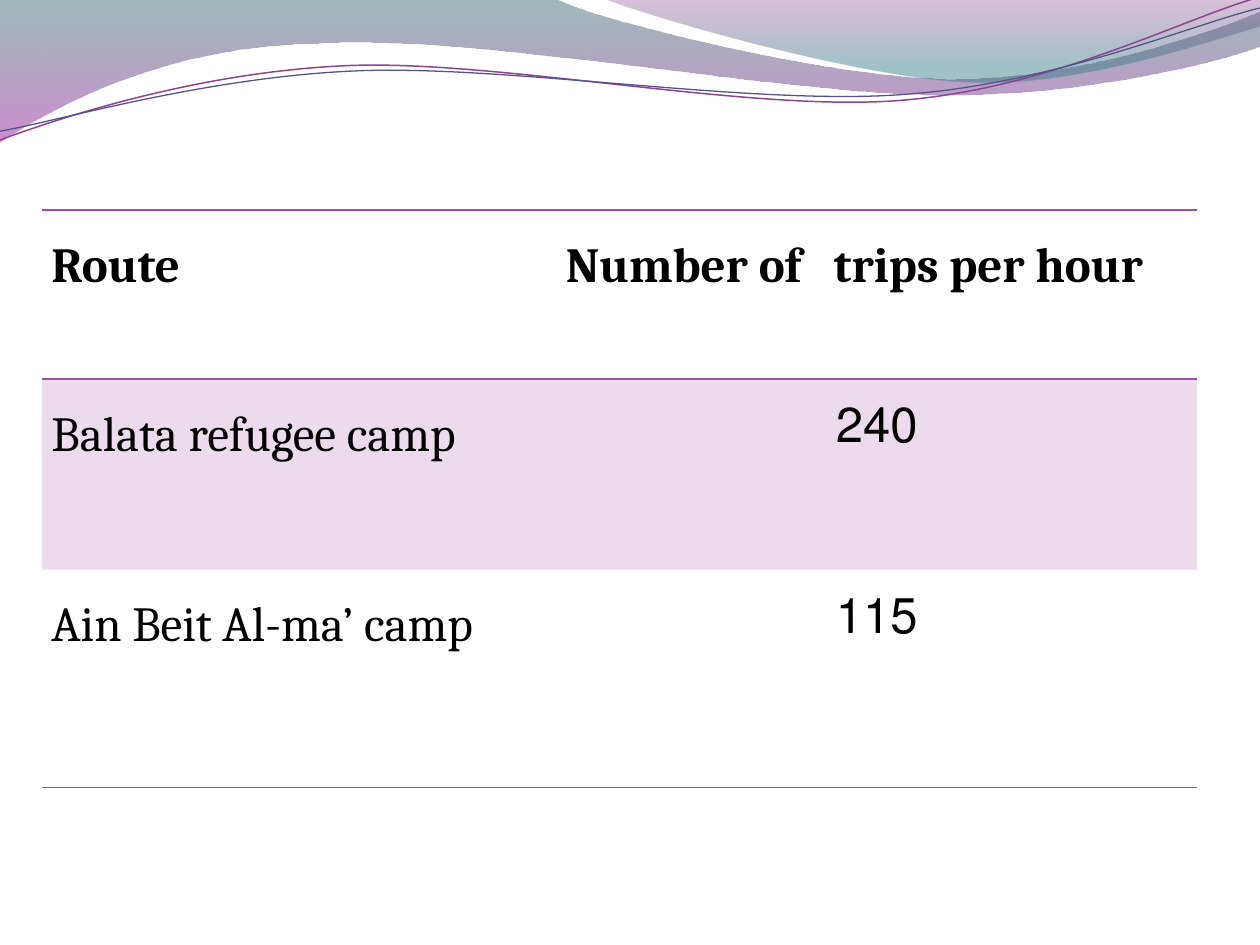
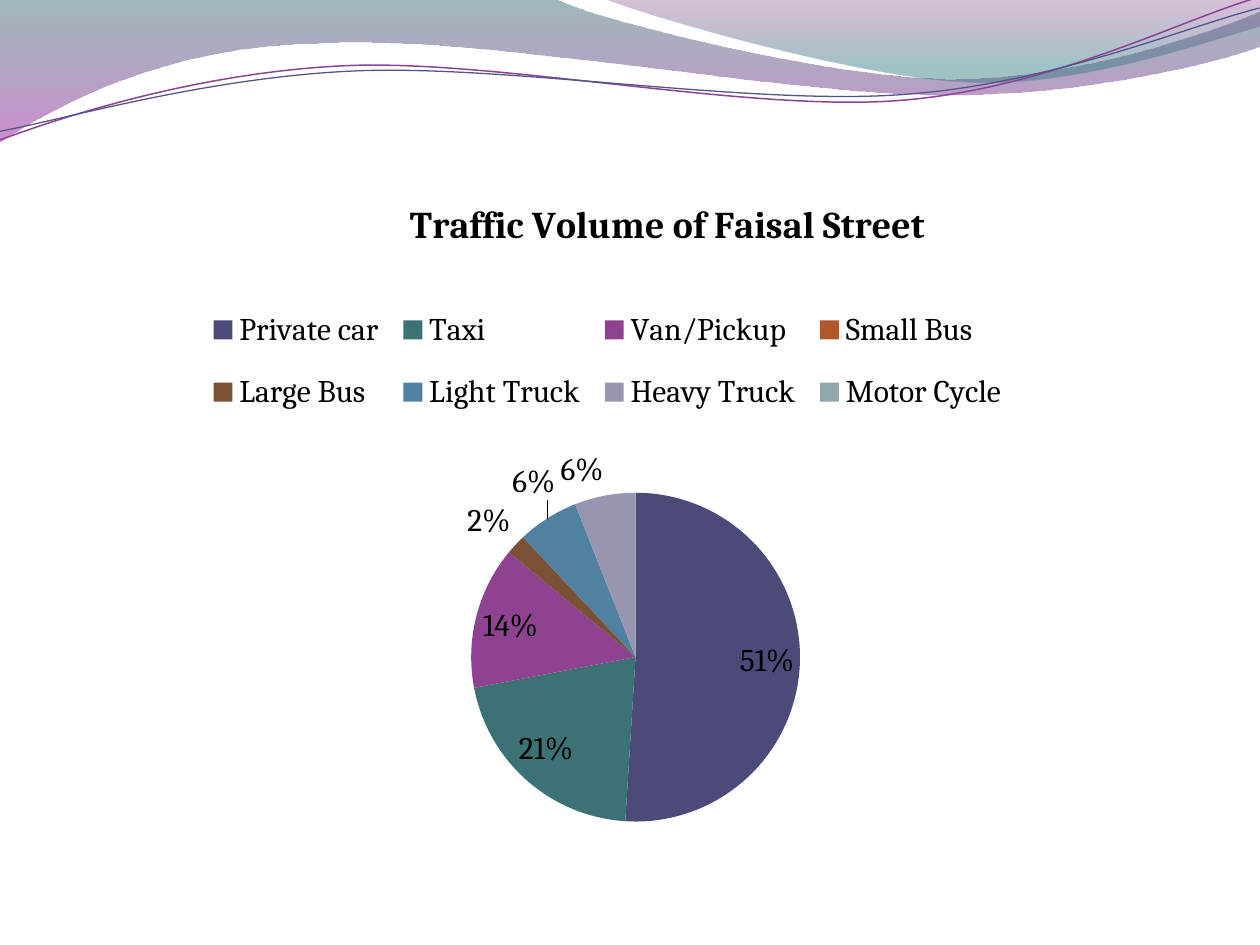
"""Build two traffic survey slides: a table of trips and a pie chart of volume."""
from dataclasses import dataclass

from lxml import etree
from pptx import Presentation
from pptx.chart.data import CategoryChartData
from pptx.dml.color import RGBColor
from pptx.enum.chart import XL_CHART_TYPE, XL_LABEL_POSITION, XL_LEGEND_POSITION
from pptx.enum.text import PP_ALIGN
from pptx.oxml.ns import qn
from pptx.util import Pt

PIE = XL_CHART_TYPE.PIE
BEST_FIT = XL_LABEL_POSITION.BEST_FIT
LEGEND_TOP = XL_LEGEND_POSITION.TOP
LEFT, CENTER = PP_ALIGN.LEFT, PP_ALIGN.CENTER
NO_TABLE_STYLE = "{2D5ABB26-0587-4C30-8999-92F81FD0307C}"


@dataclass(frozen=True)
class Theme:
    """Colours, font and type sizes of the deck."""
    font: str = "Cambria"
    text: str = "000000"
    accent: str = "A04DA3"
    tint: int = 20
    table_size: float = 28
    title_size: float = 21.6
    chart_size: float = 18
    wide_wave: tuple = ((0, "2D6368", 45), (100, "A530A9", 55))
    right_wave: tuple = ((0, "7F2F82", 30), (80, "2F7B82", 45))
    purple_line: str = "8D4490"
    indigo_line: str = "53548A"
    slices: tuple = ("4B4A79", "3B7276", "8E4290", "AF5829",
                     "7B5135", "5081A1", "9796B0", "90A8AC")


WIDE_WAVE = [
    (0, 0), (317, -1),
    (343, 12, 478, 45, 546, 45), (614, 45, 690, 19, 720, 6.5), (721, 26),
    (708, 32, 626, 55, 537, 54), (448, 54, 275, 20, 185, 24.5),
    (93, 26, 33, 60, -1, 81.5), (0, 0)]
RIGHT_WAVE = [
    (345, -1), (366, 8, 491, 45, 554, 47), (616, 50, 692, 23, 720, 15),
    (720, 0), (345, -1)]
PURPLE_CURVE = [
    (0, 80), (35, 67, 114, 41, 199, 37.5), (284, 34, 427, 64, 513, 57.5),
    (600, 51, 675, 11, 719, -1.5)]
INDIGO_CURVE = [
    (0, 75), (34, 69, 118, 44, 204, 40.5), (290, 37, 430, 60.5, 516, 54),
    (602, 48, 678, 15, 720, 4.5)]

TRIPS = [
    ("Route", "Number of\ttrips per hour"),
    ("Balata refugee camp", "240"),
    ("Ain Beit Al-ma’ camp", "115")]
VOLUME = {
    "Private car": 51, "Taxi": 21, "Van/Pickup": 14, "Small Bus": 0,
    "Large Bus": 2, "Light Truck": 6, "Heavy Truck": 6, "Motor Cycle": 0}


def apply(target, **values):
    """Set each given attribute on the target."""
    for name, value in values.items():
        setattr(target, name, value)


def child(parent, tag, **attributes):
    """Add an XML child with attributes."""
    return etree.SubElement(parent, qn(tag), attributes)


def set_alpha(fill_element, percents):
    """Give the colours inside a fill their opacity."""
    for colour, percent in zip(fill_element.iter(qn("a:srgbClr")), percents):
        child(colour, "a:alpha", val=str(percent * 1000))


def bend(shape, segments):
    """Turn the straight lines of a freeform into Bezier curves."""
    lines = list(shape.element.iter(qn("a:lnTo")))
    for line, segment in zip(lines, segments[1:]):
        if len(segment) == 2:
            continue
        curve = etree.Element(qn("a:cubicBezTo"))
        for x, y in zip(segment[::2], segment[1::2]):
            child(curve, "a:pt", x=str(Pt(x) - shape.left),
                  y=str(Pt(y) - shape.top))
        line.getparent().replace(line, curve)


def place(parent, before, **box):
    """Give a chart part a manual layout in fractions of the chart."""
    for old in parent.findall(qn("c:layout")):
        parent.remove(old)
    layout = etree.Element(qn("c:layout"))
    parent.find(qn(before)).addprevious(layout)
    manual = child(layout, "c:manualLayout")
    if before == "c:pieChart":
        child(manual, "c:layoutTarget", val="inner")
    for axis in ("x", "y"):
        child(manual, f"c:{axis}Mode", val="edge")
    for key, value in box.items():
        child(manual, f"c:{key}", val=str(value))


class Deck:
    """Hold the theme and the current slide, and draw elements on it."""

    def __init__(self, theme):
        """Start a deck on a layout without placeholders."""
        self.theme = theme
        self.file = Presentation()
        apply(self.file, slide_width=Pt(720), slide_height=Pt(540))
        self.layout = self.file.slide_layouts[6]
        for placeholder in list(self.layout.placeholders):
            self.layout.shapes.element.remove(placeholder.element)
        self.slide = None

    def add_slide(self):
        """Add a slide and make it current."""
        self.slide = self.file.slides.add_slide(self.layout)

    def font(self, font, size, bold=False):
        """Format a font in the deck's style."""
        apply(font, name=self.theme.font, size=Pt(size), bold=bold)
        font.color.rgb = RGBColor.from_string(self.theme.text)

    def outline(self, segments, closed):
        """Draw a curved freeform and move it to the shared layout."""
        anchors = [(Pt(segment[-2]), Pt(segment[-1])) for segment in segments]
        builder = self.slide.shapes.build_freeform(*anchors[0])
        builder.add_line_segments(anchors[1:], close=closed)
        shape = builder.convert_to_shape()
        bend(shape, segments)
        shape.shadow.inherit = False
        self.layout.shapes.element.append(shape.element)
        return shape

    def wave(self, segments, stops):
        """Draw a wave with a translucent vertical gradient."""
        shape = self.outline(segments, True)
        shape.line.fill.background()
        shape.fill.gradient()
        shape.fill.gradient_angle = 270
        for stop, (position, colour, _) in zip(shape.fill.gradient_stops, stops):
            stop.color.rgb = RGBColor.from_string(colour)
            stop.position = position / 100
        set_alpha(shape.element.spPr, [opacity for _, _, opacity in stops])

    def curve(self, segments, colour, width):
        """Draw an open curved line."""
        shape = self.outline(segments, False)
        shape.fill.background()
        shape.line.color.rgb = RGBColor.from_string(colour)
        shape.line.width = Pt(width)

    def band(self):
        """Draw the wave band shared by all slides."""
        theme = self.theme
        self.wave(WIDE_WAVE, theme.wide_wave)
        self.wave(RIGHT_WAVE, theme.right_wave)
        self.curve(PURPLE_CURVE, theme.purple_line, 0.85)
        self.curve(INDIGO_CURVE, theme.indigo_line, 0.75)

    def rule(self, properties, edge):
        """Draw one accent border on a cell."""
        border = etree.Element(qn(edge), w=str(Pt(1)))
        child(child(border, "a:solidFill"), "a:srgbClr", val=self.theme.accent)
        properties.insert(0, border)

    def table(self, rows, left, top, widths, heights):
        """Draw a ruled table with a tinted second row."""
        frame = self.slide.shapes.add_table(
            len(rows), len(widths), Pt(left), Pt(top),
            Pt(sum(widths)), Pt(sum(heights)))
        next(frame.element.iter(qn("a:tableStyleId"))).text = NO_TABLE_STYLE
        for column, width in zip(frame.table.columns, widths):
            column.width = Pt(width)
        for index, (row, height) in enumerate(zip(rows, heights)):
            frame.table.rows[index].height = Pt(height)
            for position, wording in enumerate(row):
                self.cell(frame.table.cell(index, position), wording, index,
                          index == len(rows) - 1)

    def cell(self, cell, wording, row, is_last):
        """Fill and format one table cell."""
        apply(cell, text=wording, margin_left=Pt(5.4), margin_right=Pt(5.4),
              margin_top=0, margin_bottom=0)
        paragraph = cell.text_frame.paragraphs[0]
        is_number = wording.isdigit()
        apply(paragraph, alignment=CENTER if is_number else LEFT,
              line_spacing=1.5)
        self.font(paragraph.runs[0].font, self.theme.table_size, row == 0)
        if is_number:
            paragraph._p.pPr.set("rtl", "1")
        if "\t" in wording:
            child(child(paragraph._p.pPr, "a:tabLst"), "a:tab",
                  pos=str(Pt(153)), algn="l")
        if row == 1:
            cell.fill.solid()
            cell.fill.fore_color.rgb = RGBColor.from_string(self.theme.accent)
            set_alpha(cell._tc.tcPr, [self.theme.tint])
        else:
            cell.fill.background()
        if row == 0 or is_last:
            self.rule(cell._tc.tcPr, "a:lnB")
        if row == 0:
            self.rule(cell._tc.tcPr, "a:lnT")

    def pie(self, title, shares, left, top, width, height):
        """Draw a pie chart with a title, a legend and percentages."""
        data = CategoryChartData()
        data.categories = list(shares)
        data.add_series("Series 1", list(shares.values()))
        chart = self.slide.shapes.add_chart(
            PIE, Pt(left), Pt(top), Pt(width), Pt(height), data).chart
        self.font(chart.font, self.theme.chart_size)
        apply(chart, has_title=True, has_legend=True)
        heading = chart.chart_title.text_frame
        heading.text = title
        self.font(heading.paragraphs[0].runs[0].font, self.theme.title_size, True)
        apply(chart.legend, position=LEGEND_TOP, include_in_layout=False)
        plot = chart.plots[0]
        plot.vary_by_categories = True
        series = plot.series[0]
        for index, colour in enumerate(self.theme.slices):
            fill = series.points[index].format.fill
            fill.solid()
            fill.fore_color.rgb = RGBColor.from_string(colour)
        apply(series.data_labels, show_percentage=True, show_value=False,
              number_format="0%", number_format_is_linked=False,
              position=BEST_FIT)
        space = chart._chartSpace
        place(next(space.iter(qn("c:title"))), "c:overlay", x=0.3, y=0.05)
        place(next(space.iter(qn("c:legend"))), "c:overlay",
              x=0.12, y=0.18, w=0.72, h=0.21)
        place(next(space.iter(qn("c:plotArea"))), "c:pieChart",
              x=0.36, y=0.46, w=0.29, h=0.48)


def main():
    """Build and save the deck."""
    deck = Deck(Theme())
    deck.add_slide()
    deck.band()
    deck.table(TRIPS, 24, 120, (294, 366), (96.5, 109, 124.5))
    deck.add_slide()
    deck.pie("Traffic Volume of Faisal Street", VOLUME, 36, 90, 648, 408)
    deck.file.save("out.pptx")


if __name__ == "__main__":
    main()
